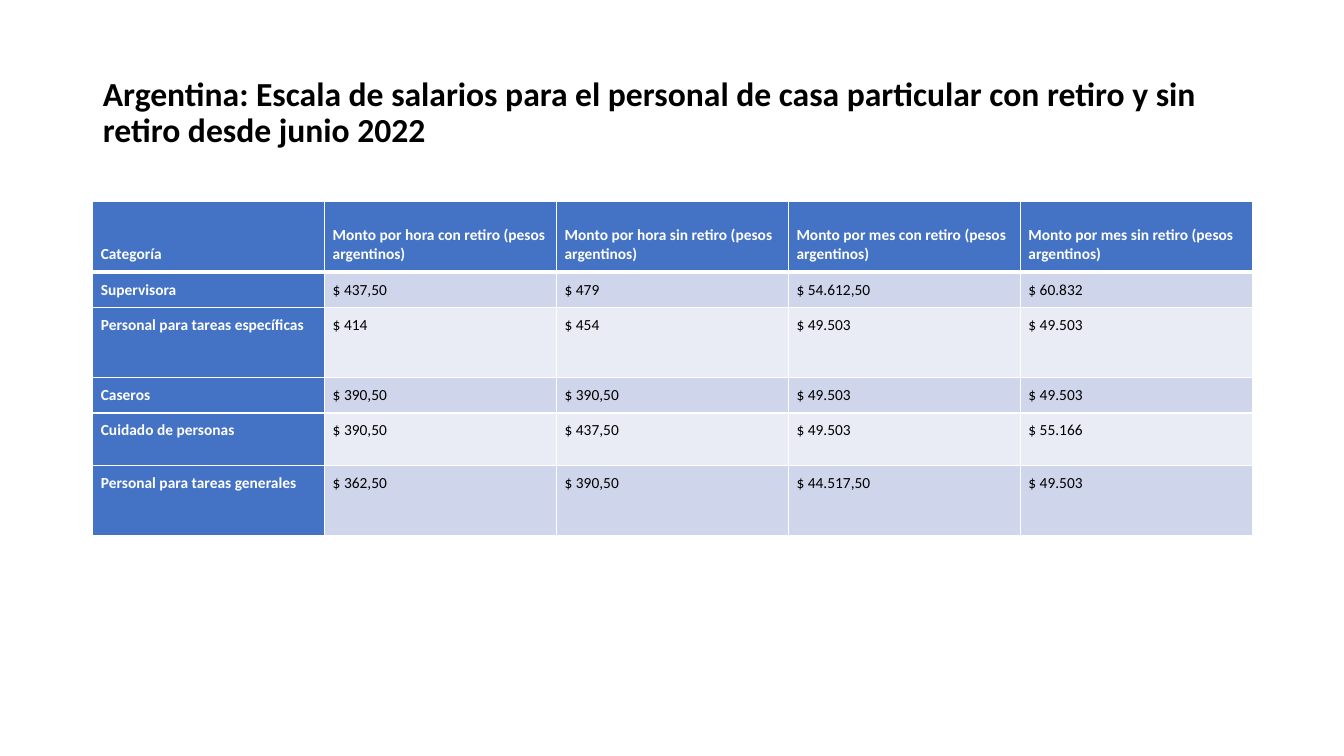
from dataclasses import dataclass

from lxml import etree
from pptx import Presentation
from pptx.dml.color import RGBColor
from pptx.enum import text as t
from pptx.oxml import ns
from pptx.util import Inches, Pt


@dataclass(frozen=True)
class Theme:
    font: str = "Calibri"
    ink: str = "000000"
    white: str = "FFFFFF"
    head: str = "4472C4"
    bands: tuple = ("CFD5EA", "E9EBF5")
    title: int = 24
    body: int = 11


theme = Theme()


def style(para, size, color, bold):
    for run in para.runs:
        font = run.font
        font.name, font.size, font.bold = theme.font, Pt(size), bold
        font.color.rgb = RGBColor.from_string(color)


def border(cell, side, width):
    """Draw one white cell edge; call for L, R, T, B in that order, before the fill."""
    props = cell._tc.get_or_add_tcPr()
    line = etree.SubElement(props, ns.qn(f"a:ln{side}"), w=str(Pt(width)))
    fill = etree.SubElement(line, ns.qn("a:solidFill"))
    etree.SubElement(fill, ns.qn("a:srgbClr"), val=theme.white)


prs = Presentation()
prs.slide_width, prs.slide_height = Inches(13.33), Inches(7.5)
slide = prs.slides.add_slide(prs.slide_layouts[5])

# Title
title = slide.shapes.title
title.left, title.top = Inches(0.92), Inches(0.4)
title.width, title.height = Inches(11.5), Inches(1.45)
frame = title.text_frame
frame.text = ("Argentina: Escala de salarios para el personal de casa particular "
              "con retiro y sin retiro desde junio 2022")
frame.word_wrap = True
frame.auto_size = t.MSO_AUTO_SIZE.NONE
frame.vertical_anchor = t.MSO_ANCHOR.MIDDLE
para = frame.paragraphs[0]
para.alignment = t.PP_ALIGN.LEFT
para.line_spacing = 0.9
style(para, theme.title, theme.ink, True)

# Salary table
heads = ["Categoría"] + [
    f"Monto por {unit} {kind} retiro (pesos argentinos)"
    for unit in ("hora", "mes") for kind in ("con", "sin")
]
rows = [
    heads,
    ["Supervisora", "$ 437,50", "$ 479", "$ 54.612,50", "$ 60.832"],
    ["Personal para tareas específicas", "$ 414", "$ 454", "$ 49.503", "$ 49.503"],
    ["Caseros", "$ 390,50", "$ 390,50", "$ 49.503", "$ 49.503"],
    ["Cuidado de personas", "$ 390,50", "$ 437,50", "$ 49.503", "$ 55.166"],
    ["Personal para tareas generales", "$ 362,50", "$ 390,50", "$ 44.517,50", "$ 49.503"],
]
heights = [0.7, 0.33, 0.7, 0.33, 0.52, 0.7]
table = slide.shapes.add_table(
    len(rows), len(heads), Inches(0.92), Inches(2), Inches(11.5), Inches(sum(heights))
).table
table.first_col = True
for col in table.columns:
    col.width = Inches(2.3)

for r, (row, height) in enumerate(zip(rows, heights)):
    table.rows[r].height = Inches(height)
    for c, value in enumerate(row):
        cell = table.cell(r, c)
        label = r == 0 or c == 0
        edges = {"L": 1, "R": 1, "T": 3 if r == 1 else 1, "B": 3 if r == 0 else 1}
        for side, width in edges.items():
            border(cell, side, width)
        cell.fill.solid()
        color = theme.head if label else theme.bands[(r - 1) % 2]
        cell.fill.fore_color.rgb = RGBColor.from_string(color)
        cell.margin_left = cell.margin_right = Inches(0.08)
        cell.margin_top = cell.margin_bottom = Inches(0.08)
        cell.vertical_anchor = t.MSO_ANCHOR.BOTTOM if r == 0 else t.MSO_ANCHOR.TOP
        cell.text_frame.text = value
        para = cell.text_frame.paragraphs[0]
        para.space_after = Pt(15)
        style(para, theme.body, theme.white if label else theme.ink, label)

prs.save("out.pptx")
